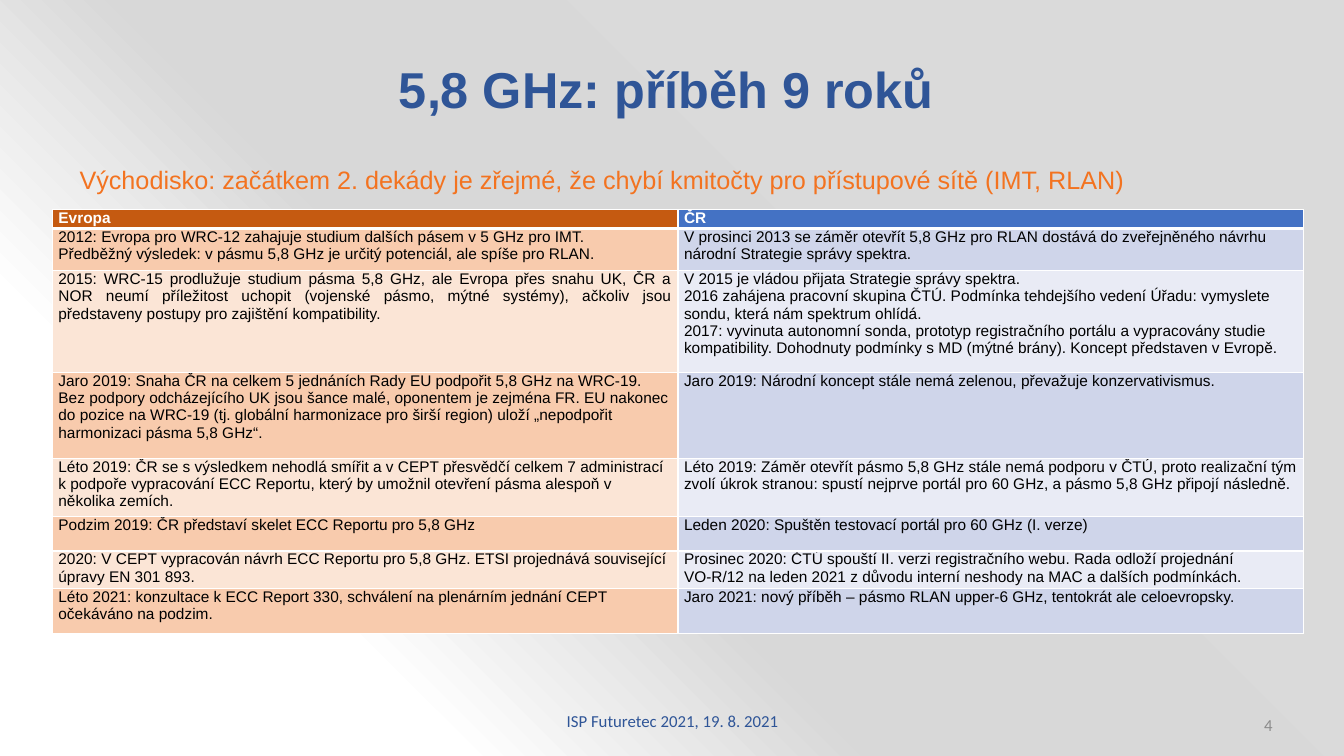
from dataclasses import dataclass

from lxml import etree
from pptx import Presentation
from pptx import util as u
from pptx.dml.color import RGBColor
from pptx.enum import text
from pptx.oxml import parse_xml
from pptx.oxml.ns import nsdecls, qn


@dataclass(frozen=True)
class Theme:
    heading_font: str = "Arial"
    footer_font: str = "Calibri"
    title_size: int = 36
    lead_size: int = 18
    footer_size: int = 12
    table_size: int = 11
    blue: str = "2F5597"
    orange: str = "F37320"
    gray: str = "8C8C8C"
    white: str = "FFFFFF"
    black: str = "000000"
    header_fills: tuple = ("C55A11", "4472C4")
    band_fills: tuple = (("F8CBAD", "CFD5EA"), ("FBE5D6", "E9EBF5"))
    background: tuple = ((22, "FFFFFF", 100), (41, "D9D9D9", 44),
                         (63, "D8D8D8", 100), (84, "DADADA", 100))


THEME = Theme()
ALIGN = text.PP_ALIGN
ANCHOR = text.MSO_ANCHOR

TITLE = "5,8 GHz: příběh 9 roků"
LEAD = "Východisko: začátkem 2. dekády je zřejmé, že chybí kmitočty pro přístupové sítě (IMT, RLAN)"
FOOTER = "ISP Futuretec 2021, 19. 8. 2021"
PAGE_NUMBER = "4"

STORY = [
    ("Evropa", "ČR"),
    ("2012: Evropa pro WRC-12 zahajuje studium dalších pásem v 5 GHz pro IMT.\n"
     "Předběžný výsledek: v pásmu 5,8 GHz je určitý potenciál, ale spíše pro RLAN.",
     "V prosinci 2013 se záměr otevřít 5,8 GHz pro RLAN dostává do zveřejněného návrhu "
     "národní Strategie správy spektra."),
    ("2015: WRC-15 prodlužuje studium pásma 5,8 GHz, ale Evropa přes snahu UK, ČR a NOR "
     "neumí příležitost uchopit (vojenské pásmo, mýtné systémy), ačkoliv jsou představeny "
     "postupy pro zajištění kompatibility.",
     "V 2015 je vládou přijata Strategie správy spektra.\n"
     "2016 zahájena pracovní skupina ČTÚ. Podmínka tehdejšího vedení Úřadu: vymyslete "
     "sondu, která nám spektrum ohlídá.\n"
     "2017: vyvinuta autonomní sonda, prototyp registračního portálu a vypracovány studie "
     "kompatibility. Dohodnuty podmínky s MD (mýtné brány). Koncept představen v Evropě."),
    ("Jaro 2019: Snaha ČR na celkem 5 jednáních Rady EU podpořit 5,8 GHz na WRC-19. "
     "Bez podpory odcházejícího UK jsou šance malé, oponentem je zejména FR. EU nakonec "
     "do pozice na WRC-19 (tj. globální harmonizace pro širší region) uloží „nepodpořit "
     "harmonizaci pásma 5,8 GHz“.",
     "Jaro 2019: Národní koncept stále nemá zelenou, převažuje konzervativismus."),
    ("Léto 2019: ČR se s výsledkem nehodlá smířit a v CEPT přesvědčí celkem 7 administrací "
     "k podpoře vypracování ECC Reportu, který by umožnil otevření pásma alespoň "
     "v několika zemích.",
     "Léto 2019: Záměr otevřít pásmo 5,8 GHz stále nemá podporu v ČTÚ, proto realizační tým "
     "zvolí úkrok stranou: spustí nejprve portál pro 60 GHz, a pásmo 5,8 GHz připojí následně."),
    ("Podzim 2019: ČR představí skelet ECC Reportu pro 5,8 GHz",
     "Leden 2020: Spuštěn testovací portál pro 60 GHz (I. verze)"),
    ("2020: V CEPT vypracován návrh ECC Reportu pro 5,8 GHz. ETSI projednává související "
     "úpravy EN 301 893.",
     "Prosinec 2020: ČTÚ spouští II. verzi registračního webu. Rada odloží projednání "
     "VO-R/12 na leden 2021 z důvodu interní neshody na MAC a dalších podmínkách."),
    ("Léto 2021: konzultace k ECC Report 330, schválení na plenárním jednání CEPT "
     "očekáváno na podzim.",
     "Jaro 2021: nový příběh – pásmo RLAN upper-6 GHz, tentokrát ale celoevropsky."),
]
JUSTIFIED_ROWS = 3

WIDTH, HEIGHT = u.Inches(13.33), u.Inches(7.5)
TITLE_AREA = (5.18, 4.27, 88.82, 15.73)
LEAD_AREA = (5.18, 21.07, 83.2, 5.33)
FOOTER_AREA = (33.16, 92.67, 33.76, 5.33)
NUMBER_AREA = (78.54, 93.2, 16.88, 5.33)
ROW_SHARES = (2.5, 5.6, 13.47, 11.33, 7.73, 4.53, 4.93, 6)
TABLE_AREA = (3.9, 27.73, 93.1, sum(ROW_SHARES))


def area(shares):
    return [int(share * length / 100)
            for share, length in zip(shares, (WIDTH, HEIGHT, WIDTH, HEIGHT))]


def style(paragraph, font_name, size, color, align=ALIGN.LEFT, bold=False):
    paragraph.alignment = align
    paragraph.font.name = font_name
    paragraph.font.size = u.Pt(size)
    paragraph.font.bold = bold
    paragraph.font.color.rgb = RGBColor.from_string(color)


def paint_background(slide):
    slide.background.fill.gradient()
    gradient = slide.element.find(".//" + qn("a:gradFill"))
    stops = "".join(
        f'<a:gs pos="{position * 1000}"><a:srgbClr val="{color}">'
        f'<a:alpha val="{alpha * 1000}"/></a:srgbClr></a:gs>'
        for position, color, alpha in THEME.background)
    gradient.getparent().replace(gradient, parse_xml(
        f'<a:gradFill {nsdecls("a")} rotWithShape="1"><a:gsLst>{stops}</a:gsLst>'
        '<a:path path="circle"><a:fillToRect t="100000" r="100000"/></a:path></a:gradFill>'))


def add_label(slide, words, shares, anchor, *look):
    label = slide.shapes.add_textbox(*area(shares))
    frame = label.text_frame
    frame.word_wrap = True
    frame.vertical_anchor = anchor
    frame.text = words
    style(frame.paragraphs[0], *look)


def add_border(cell, side, points):
    properties = cell._tc.get_or_add_tcPr()
    line = etree.SubElement(properties, qn("a:ln" + side), w=str(u.Pt(points)))
    fill = etree.SubElement(line, qn("a:solidFill"))
    etree.SubElement(fill, qn("a:srgbClr"), val=THEME.white)


def fill_cell(cell, words, row, column):
    header = row == 0
    for side in "LRTB":
        heavy = (row, side) in ((0, "B"), (1, "T"))
        add_border(cell, side, 3 if heavy else 1)
    fills = THEME.header_fills if header else THEME.band_fills[(row - 1) % 2]
    cell.fill.solid()
    cell.fill.fore_color.rgb = RGBColor.from_string(fills[column])
    cell.margin_left = cell.margin_right = u.Inches(0.06)
    cell.margin_top = cell.margin_bottom = 0
    cell.text = words
    justified = column == 0 and row < JUSTIFIED_ROWS
    for paragraph in cell.text_frame.paragraphs:
        style(paragraph, THEME.heading_font, THEME.table_size,
              THEME.white if header else THEME.black,
              ALIGN.JUSTIFY if justified else ALIGN.LEFT, header)


def add_story(slide):
    table = slide.shapes.add_table(len(STORY), len(STORY[0]), *area(TABLE_AREA)).table
    for row, (entries, share) in enumerate(zip(STORY, ROW_SHARES)):
        table.rows[row].height = int(HEIGHT * share / 100)
        for column, words in enumerate(entries):
            fill_cell(table.cell(row, column), words, row, column)


def add_title(slide):
    title = slide.shapes.title
    title.left, title.top, title.width, title.height = area(TITLE_AREA)
    frame = title.text_frame
    frame.text = TITLE
    frame.auto_size = text.MSO_AUTO_SIZE.NONE
    frame.vertical_anchor = ANCHOR.MIDDLE
    paragraph = frame.paragraphs[0]
    paragraph.line_spacing = 0.9
    style(paragraph, THEME.heading_font, THEME.title_size, THEME.blue, ALIGN.CENTER, True)


def main():
    presentation = Presentation()
    presentation.slide_width, presentation.slide_height = WIDTH, HEIGHT
    slide = presentation.slides.add_slide(presentation.slide_layouts.get_by_name("Title Only"))
    paint_background(slide)
    add_title(slide)
    add_label(slide, LEAD, LEAD_AREA, ANCHOR.TOP,
              THEME.heading_font, THEME.lead_size, THEME.orange)
    add_story(slide)
    add_label(slide, FOOTER, FOOTER_AREA, ANCHOR.MIDDLE,
              THEME.footer_font, THEME.footer_size, THEME.blue, ALIGN.CENTER)
    add_label(slide, PAGE_NUMBER, NUMBER_AREA, ANCHOR.MIDDLE,
              THEME.footer_font, THEME.footer_size, THEME.gray, ALIGN.RIGHT)
    presentation.save("out.pptx")


if __name__ == "__main__":
    main()
